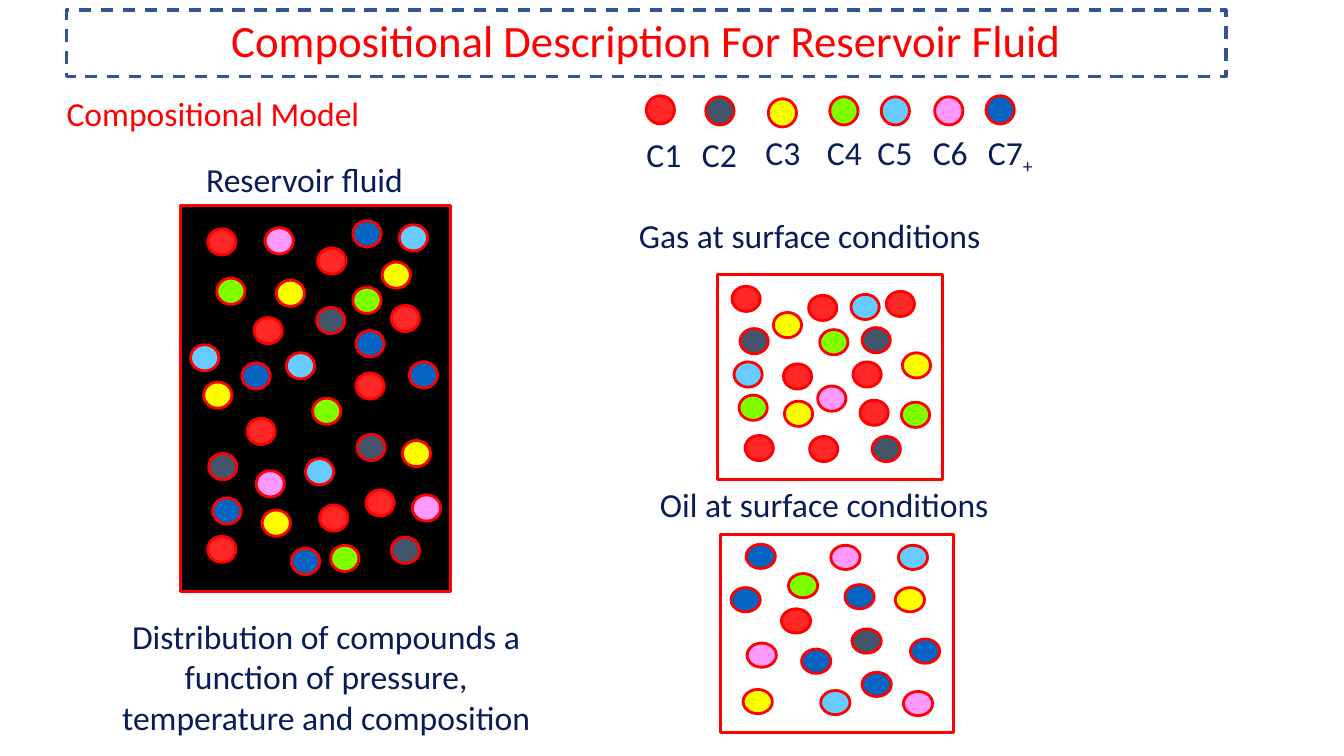
from lxml.etree import SubElement
from pptx import Presentation
from pptx.dml.color import RGBColor
from pptx.enum.dml import MSO_LINE
from pptx.enum.shapes import MSO_SHAPE
from pptx.enum.text import MSO_ANCHOR, PP_ALIGN
from pptx.oxml.ns import qn
from pptx.util import Inches, Pt

RED = "FF0000"
NAVY = "081D58"
WHITE = "FFFFFF"
COMPONENT_COLORS = {
    "C1": "FF2727",
    "C2": "44546A",
    "C3": "FFFF00",
    "C4": "7FFF00",
    "C5": "66CCFF",
    "C6": "FF99FF",
    "C7": "0563C1",
}

LEGEND = [
    ("C1", 6.41, 0.95, 6.31, 1.28, 0.55),
    ("C2", 7.00, 0.96, 6.86, 1.28, 0.55),
    ("C3", 7.62, 0.98, 7.49, 1.26, 0.55),
    ("C4", 8.23, 0.96, 8.10, 1.26, 0.55),
    ("C5", 8.74, 0.96, 8.60, 1.26, 0.55),
    ("C6", 9.27, 0.96, 9.15, 1.26, 0.55),
    ("C7", 9.78, 0.95, 9.69, 1.26, 0.66),
]

RESERVOIR_MOLECULES = {
    "C1": [(3.63, 4.86), (2.45, 4.15), (3.88, 3.03), (3.15, 2.46), (2.06, 5.32),
           (2.52, 3.15), (3.17, 5.01), (3.53, 3.70), (2.06, 2.27)],
    "C2": [(3.14, 3.05), (2.07, 4.50), (3.54, 4.31), (3.88, 5.33)],
    "C3": [(3.99, 4.37), (2.60, 5.06), (3.79, 2.60), (2.02, 3.79), (2.74, 2.78)],
    "C4": [(3.28, 5.41), (2.15, 2.76), (3.10, 3.95), (3.50, 2.85)],
    "C5": [(1.89, 3.42), (2.84, 3.50), (3.03, 4.55), (3.96, 2.23)],
    "C6": [(2.54, 4.67), (2.63, 2.26), (4.09, 4.91)],
    "C7": [(2.89, 5.44), (2.40, 3.60), (3.53, 3.28), (3.50, 2.19), (4.06, 3.59),
           (2.11, 4.94)],
}

GAS_MOLECULES = {
    "C1": [(7.77, 3.61), (8.53, 3.97), (8.46, 3.59), (7.39, 4.32), (7.26, 2.84),
           (8.79, 2.89), (8.03, 4.33), (8.02, 2.93)],
    "C2": [(8.55, 3.25), (8.65, 4.33), (7.34, 3.26)],
    "C4": [(8.13, 3.27), (8.94, 3.99), (7.33, 3.92)],
    "C3": [(7.78, 3.98), (8.95, 3.50), (7.67, 3.10)],
    "C5": [(8.44, 2.92), (7.28, 3.59)],
    "C6": [(8.11, 3.83)],
}

OIL_MOLECULES = {
    "C1": [(7.75, 6.04)],
    "C2": [(8.45, 6.24)],
    "C3": [(8.88, 5.83), (7.37, 6.84)],
    "C4": [(7.82, 5.69)],
    "C5": [(8.14, 6.85), (8.91, 5.41)],
    "C6": [(8.96, 6.86), (8.24, 5.41), (7.41, 6.38)],
    "C7": [(8.55, 6.67), (9.03, 6.34), (7.95, 6.44), (8.38, 5.80), (7.25, 5.83),
           (7.40, 5.40)],
}


def color(hex_value):
    return RGBColor.from_string(hex_value)


def format_paragraph(paragraph, size, hex_value, alignment):
    paragraph.alignment = alignment
    paragraph.font.name = "Calibri"
    paragraph.font.size = Pt(size)
    paragraph.font.color.rgb = color(hex_value)


def add_shape(shapes, kind, box, fill, line=RED, line_width=2):
    shape = shapes.add_shape(kind, *map(Inches, box))
    shape.shadow.inherit = False
    shape.fill.solid()
    shape.fill.fore_color.rgb = color(fill)
    shape.line.color.rgb = color(line)
    shape.line.width = Pt(line_width)
    return shape


def add_label(shapes, text, box, wrap=False):
    text_box = shapes.add_textbox(*map(Inches, box))
    text_box.text_frame.word_wrap = wrap
    paragraph = text_box.text_frame.paragraphs[0]
    paragraph.add_run().text = text
    format_paragraph(paragraph, 24, NAVY, PP_ALIGN.CENTER)
    return paragraph


def add_subscript(paragraph, text):
    run = paragraph.add_run()
    run.text = text
    run.font._element.set("baseline", "-25000")


def add_legend(shapes):
    for name, dot_left, dot_top, label_left, label_top, label_width in LEGEND:
        group = shapes.add_group_shape()
        add_shape(group.shapes, MSO_SHAPE.OVAL, (dot_left, dot_top, 0.28, 0.28),
                  COMPONENT_COLORS[name])
        paragraph = add_label(group.shapes, name,
                              (label_left, label_top, label_width, 0.51))
        if name == "C7":
            add_subscript(paragraph, "+")


def add_container(shapes, box, fill, molecules, width, height):
    group = shapes.add_group_shape()
    add_shape(group.shapes, MSO_SHAPE.RECTANGLE, box, fill)
    for component, positions in molecules.items():
        for left, top in positions:
            add_shape(group.shapes, MSO_SHAPE.OVAL, (left, top, width, height),
                      COMPONENT_COLORS[component])


def add_heading(shapes, text):
    heading = add_shape(shapes, MSO_SHAPE.RECTANGLE, (0.66, 0.1, 11.5, 0.66),
                        WHITE, "325491", 2.25)
    heading.line.dash_style = MSO_LINE.DASH
    heading.text_frame.vertical_anchor = MSO_ANCHOR.MIDDLE
    paragraph = heading.text_frame.paragraphs[0]
    paragraph.text = text
    paragraph.line_spacing = 0.9
    format_paragraph(paragraph, 32, RED, PP_ALIGN.CENTER)


def format_title(title, text):
    title.left, title.top = Inches(0.56), Inches(0.91)
    title.width, title.height = Inches(3.71), Inches(0.48)
    frame = title.text_frame
    frame.text = text
    frame.vertical_anchor = MSO_ANCHOR.MIDDLE
    SubElement(frame._txBody.bodyPr, qn("a:noAutofit"))
    paragraph = frame.paragraphs[0]
    paragraph.line_spacing = 0.9
    format_paragraph(paragraph, 24, RED, PP_ALIGN.LEFT)


def main():
    presentation = Presentation()
    presentation.slide_width = Inches(13.33)
    presentation.slide_height = Inches(7.5)
    slide = presentation.slides.add_slide(presentation.slide_layouts[5])
    shapes = slide.shapes

    format_title(shapes.title, "Compositional Model")
    add_label(shapes, "Reservoir fluid", (1.93, 1.53, 2.18, 0.5))
    add_legend(shapes)
    add_label(shapes, "Gas at surface conditions", (6.22, 2.08, 3.62, 0.5))
    add_label(shapes, "Oil at surface conditions", (6.43, 4.75, 3.49, 0.5))
    add_label(
        shapes,
        "Distribution of compounds a function of pressure, temperature and composition",
        (0.87, 6.06, 4.73, 1.31),
        wrap=True,
    )
    add_container(shapes, (1.79, 2.04, 2.68, 3.83), "000000",
                  RESERVOIR_MOLECULES, 0.28, 0.26)
    add_container(shapes, (7.12, 2.72, 2.23, 2.04), WHITE,
                  GAS_MOLECULES, 0.28, 0.25)
    add_container(shapes, (7.15, 5.3, 2.31, 1.97), WHITE,
                  OIL_MOLECULES, 0.29, 0.24)
    add_heading(shapes, "Compositional Description For Reservoir Fluid")
    presentation.save("out.pptx")


if __name__ == "__main__":
    main()
